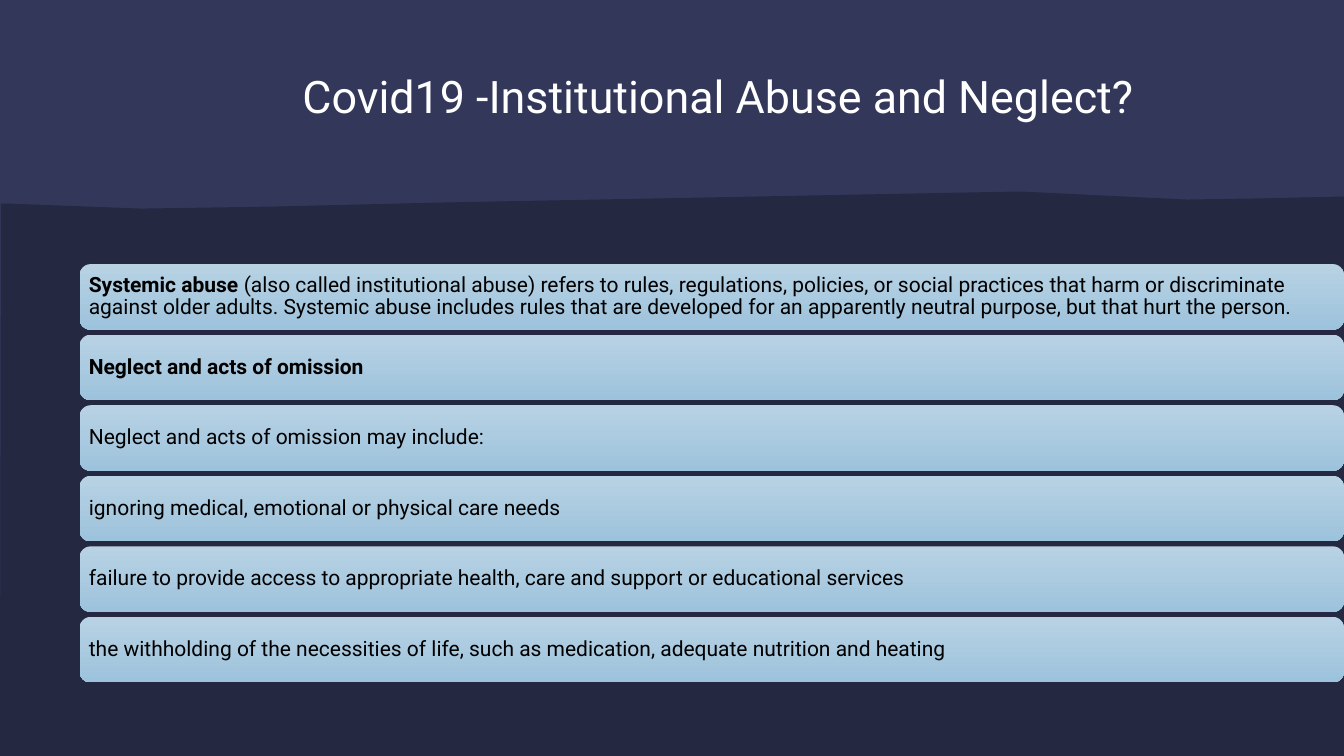
from pptx import Presentation
from pptx.dml.color import RGBColor
from pptx.enum import shapes, text
from pptx.util import Inches, Pt

FONT = "Roboto"
INDIGO = RGBColor(0x33, 0x38, 0x5B)
NAVY = RGBColor(0x24, 0x28, 0x41)
BAR_TOP = RGBColor(0xB8, 0xD2, 0xE4)
BAR_BOTTOM = RGBColor(0x9D, 0xC3, 0xDC)
WHITE = RGBColor(0xFF, 0xFF, 0xFF)
BLACK = RGBColor(0, 0, 0)

TORN_EDGE = [
    (0.01, 2.02), (0.08, 2.02), (1.4, 2.07), (2.72, 2.05), (3.54, 2.03),
    (4.36, 2.01), (10.12, 1.9), (11.77, 1.98), (12.43, 1.97), (13.33, 1.95),
]

# Each statement is a list of (words, bold) runs
STATEMENTS = [
    [("Systemic abuse ", True),
     ("(also called institutional abuse) refers to rules, regulations, policies, "
      "or social practices that harm or discriminate against older adults. "
      "Systemic abuse includes rules that are developed for an apparently neutral "
      "purpose, but that hurt the person.", False)],
    [("Neglect and acts of omission", True)],
    [("Neglect and acts of omission may include:", False)],
    [("ignoring medical, emotional or physical care needs", False)],
    [("failure to provide access to appropriate health, care and support or "
      "educational services", False)],
    [("the withholding of the necessities of life, such as medication, adequate "
      "nutrition and heating", False)],
]
BAR_START, BAR_PITCH = 2.62, 0.7


def set_font(paragraph, size, color):
    paragraph.font.name = FONT
    paragraph.font.size = Pt(size)
    paragraph.font.color.rgb = color


def set_insets(frame, side, top):
    frame.margin_left = frame.margin_right = Inches(side)
    frame.margin_top = frame.margin_bottom = Inches(top)


def paint(shape, color):
    shape.shadow.inherit = False
    shape.fill.solid()
    shape.fill.fore_color.rgb = color
    shape.line.fill.background()


def add_backdrop(slide):
    header = slide.shapes.add_shape(
        shapes.MSO_SHAPE.RECTANGLE, 0, 0, Inches(13.33), Inches(7.5))
    paint(header, INDIGO)

    # Dark lower area with an uneven upper edge
    outline = slide.shapes.build_freeform(0, Inches(7.5), scale=1.0)
    edge = [(Inches(x), Inches(y)) for x, y in TORN_EDGE]
    outline.add_line_segments(edge + [(Inches(13.33), Inches(7.5))], close=True)
    paint(outline.convert_to_shape(), NAVY)


def add_title(slide, words):
    title = slide.shapes.add_textbox(
        Inches(3), Inches(0.68), Inches(9.52), Inches(0.75))
    frame = title.text_frame
    frame.word_wrap = True
    set_insets(frame, 0, 0)
    frame.text = words
    set_font(frame.paragraphs[0], 32, WHITE)


def add_bar(slide, top, runs):
    bar = slide.shapes.add_shape(
        shapes.MSO_SHAPE.ROUNDED_RECTANGLE,
        Inches(0.79), Inches(top), Inches(12.54), Inches(0.65))
    bar.shadow.inherit = False
    bar.line.fill.background()
    bar.fill.gradient()
    bar.fill.gradient_angle = 270
    for stop, color, position in zip(
            bar.fill.gradient_stops, (BAR_TOP, BAR_BOTTOM), (0, 1)):
        stop.color.rgb = color
        stop.position = position

    frame = bar.text_frame
    frame.word_wrap = True
    frame.vertical_anchor = text.MSO_ANCHOR.MIDDLE
    set_insets(frame, 0.06, 0.06)
    statement = frame.paragraphs[0]
    statement.alignment = text.PP_ALIGN.LEFT
    statement.line_spacing = 0.9
    set_font(statement, 15, BLACK)
    for words, bold in runs:
        run = statement.add_run()
        run.text = words
        run.font.bold = bold


def main():
    deck = Presentation()
    deck.slide_width, deck.slide_height = Inches(13.33), Inches(7.5)
    slide = deck.slides.add_slide(deck.slide_layouts[6])
    slide.background.fill.solid()
    slide.background.fill.fore_color.rgb = NAVY

    add_backdrop(slide)
    add_title(slide, "Covid19 -Institutional Abuse and Neglect?")
    for index, runs in enumerate(STATEMENTS):
        add_bar(slide, BAR_START + index * BAR_PITCH, runs)

    deck.save("out.pptx")


if __name__ == "__main__":
    main()
